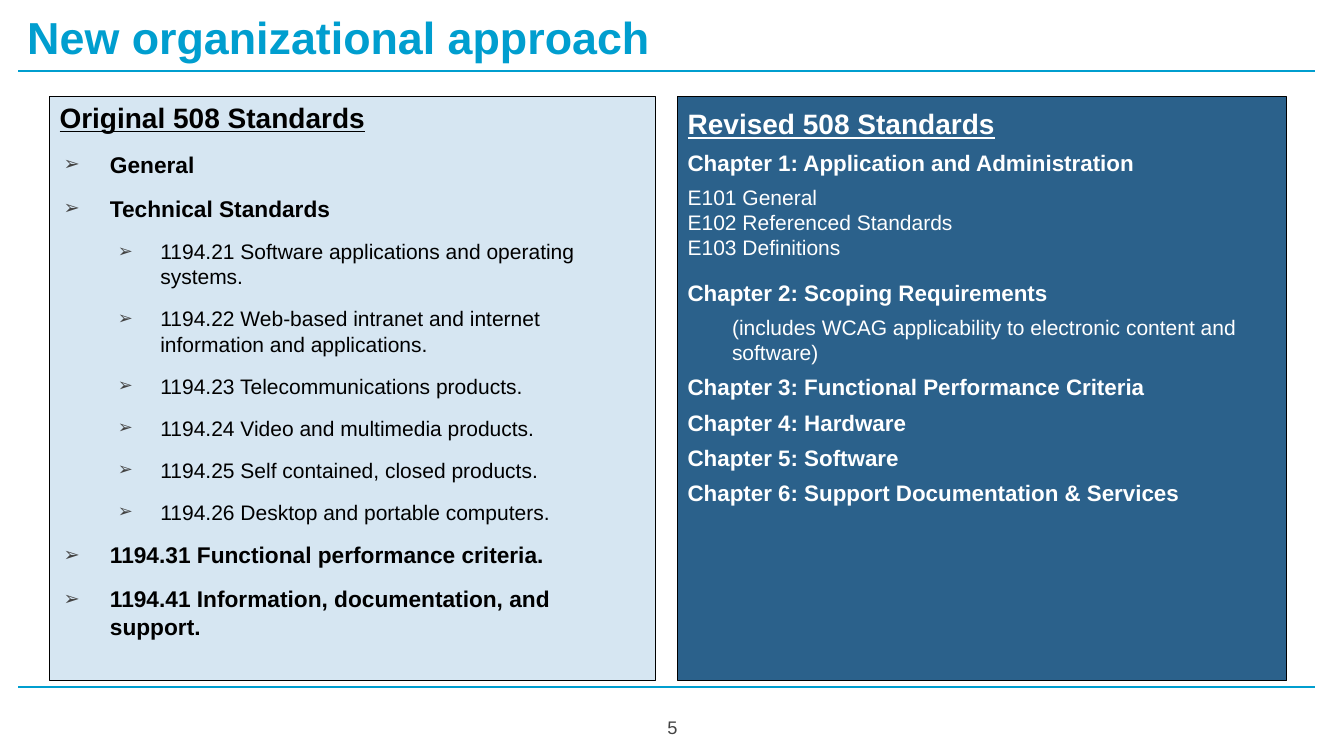
from lxml import etree
from pptx import Presentation
from pptx.dml.color import RGBColor
from pptx.enum.shapes import MSO_CONNECTOR
from pptx.enum.text import MSO_ANCHOR, MSO_AUTO_SIZE, PP_ALIGN
from pptx.oxml.ns import qn
from pptx.util import Pt

PX = 9144  # 100 px to the inch
STRAIGHT = MSO_CONNECTOR.STRAIGHT
TOP, MIDDLE = MSO_ANCHOR.TOP, MSO_ANCHOR.MIDDLE
LEFT, CENTER = PP_ALIGN.LEFT, PP_ALIGN.CENTER
FIXED = MSO_AUTO_SIZE.NONE
CYAN = RGBColor(0x00, 0x9E, 0xCF)
GRAY = RGBColor(0x43, 0x43, 0x43)
PALE = RGBColor(0xD6, 0xE6, 0xF2)
NAVY = RGBColor(0x2B, 0x61, 0x8B)
BLACK = RGBColor(0x00, 0x00, 0x00)
WHITE = RGBColor(0xFF, 0xFF, 0xFF)


def place(box, x, y, w, h, anchor=TOP):
    """Set the bounds and text frame of a box and return the frame."""
    box.left, box.top, box.width, box.height = x * PX, y * PX, w * PX, h * PX
    frame = box.text_frame
    frame.word_wrap, frame.auto_size = True, FIXED
    frame.vertical_anchor = anchor
    frame.margin_left = frame.margin_right = 10 * PX
    frame.margin_top = frame.margin_bottom = 10 * PX
    return frame


def write(frame, text, size, color, bold=False, line=False, align=LEFT,
          level=0, left=0, hang=0, before=0, after=0, pitch=1.0):
    """Add a paragraph; a hanging indent gives it an arrow bullet."""
    first = frame.paragraphs[0]
    para = frame.add_paragraph() if first.runs else first
    para.level = level
    props = para._p.get_or_add_pPr()
    props.set("marL", str(left * PX))
    props.set("indent", str(-hang * PX))
    if hang:
        tint = etree.SubElement(props, qn("a:buClr"))
        etree.SubElement(tint, qn("a:srgbClr"), val=str(GRAY))
        etree.SubElement(props, qn("a:buSzPct"), val="85000")
        etree.SubElement(props, qn("a:buFont"), typeface="Arial")
        etree.SubElement(props, qn("a:buChar"), char="➢")
    else:
        etree.SubElement(props, qn("a:buNone"))
    para.alignment, para.line_spacing = align, pitch
    para.space_before, para.space_after = Pt(before), Pt(after)
    run = para.add_run()
    run.text = text
    font = run.font
    font.name, font.size, font.color.rgb = "Arial", Pt(size), color
    font.bold, font.underline = bold, line


deck = Presentation()
deck.slide_width, deck.slide_height = 1333 * PX, 750 * PX
slide = deck.slides.add_slide(deck.slide_layouts[3])
shapes = slide.shapes
title, old, new = slide.placeholders

for y in (70, 682):
    rule = shapes.add_connector(STRAIGHT, 18 * PX, y * PX, 1304 * PX, y * PX)
    rule.line.color.rgb, rule.line.width = CYAN, Pt(1.5)
    etree.SubElement(rule._element.spPr, qn("a:effectLst"))

write(place(title, 17, 0, 1286, 70), "New organizational approach", 32, CYAN, bold=True)
page = shapes.add_textbox(0, 0, PX, PX)
write(place(page, 627, 693, 80, 57, MIDDLE), "5", 13, GRAY, align=CENTER)

for box, fill in ((old, PALE), (new, NAVY)):
    box.fill.solid()
    box.fill.fore_color.rgb = fill
    box.line.color.rgb, box.line.width = BLACK, Pt(0.75)

frame = place(old, 49, 96, 601, 579)
write(frame, "Original 508 Standards", 20, BLACK, bold=True, line=True, pitch=0.8)
for level, before, text in (
    (0, 12, "General"),
    (0, 6, "Technical Standards"),
    (1, 6, "1194.21 Software applications and operating systems."),
    (1, 6, "1194.22 Web-based intranet and internet information and applications."),
    (1, 6, "1194.23 Telecommunications products."),
    (1, 6, "1194.24 Video and multimedia products."),
    (1, 6, "1194.25 Self contained, closed products."),
    (1, 6, "1194.26 Desktop and portable computers."),
    (0, 6, "1194.31 Functional performance criteria."),
    (0, 6, "1194.41 Information, documentation, and support."),
):
    size, left, hang = ((16.2, 50, 46), (15, 100, 42))[level]
    write(frame, text, size, BLACK, bold=level == 0, level=level,
          left=left, hang=hang, before=before, after=6)

frame = place(new, 672, 96, 604, 579)
write(frame, "Revised 508 Standards", 20, WHITE, bold=True, line=True)
for bold, level, before, text in (
    (True, 0, 6, "Chapter 1: Application and Administration"),
    (False, 0, 6, "E101 General"),
    (False, 0, 0, "E102 Referenced Standards"),
    (False, 0, 0, "E103 Definitions"),
    (True, 0, 14, "Chapter 2: Scoping Requirements"),
    (False, 1, 6, "(includes WCAG applicability to electronic content and software)"),
    (True, 0, 6, "Chapter 3: Functional Performance Criteria"),
    (True, 0, 6, "Chapter 4: Hardware"),
    (True, 0, 6, "Chapter 5: Software"),
    (True, 0, 6, "Chapter 6: Support Documentation & Services"),
):
    write(frame, text, 16 if bold else 15, WHITE, bold=bold,
          level=level, left=44 * level, before=before)

deck.save("out.pptx")
